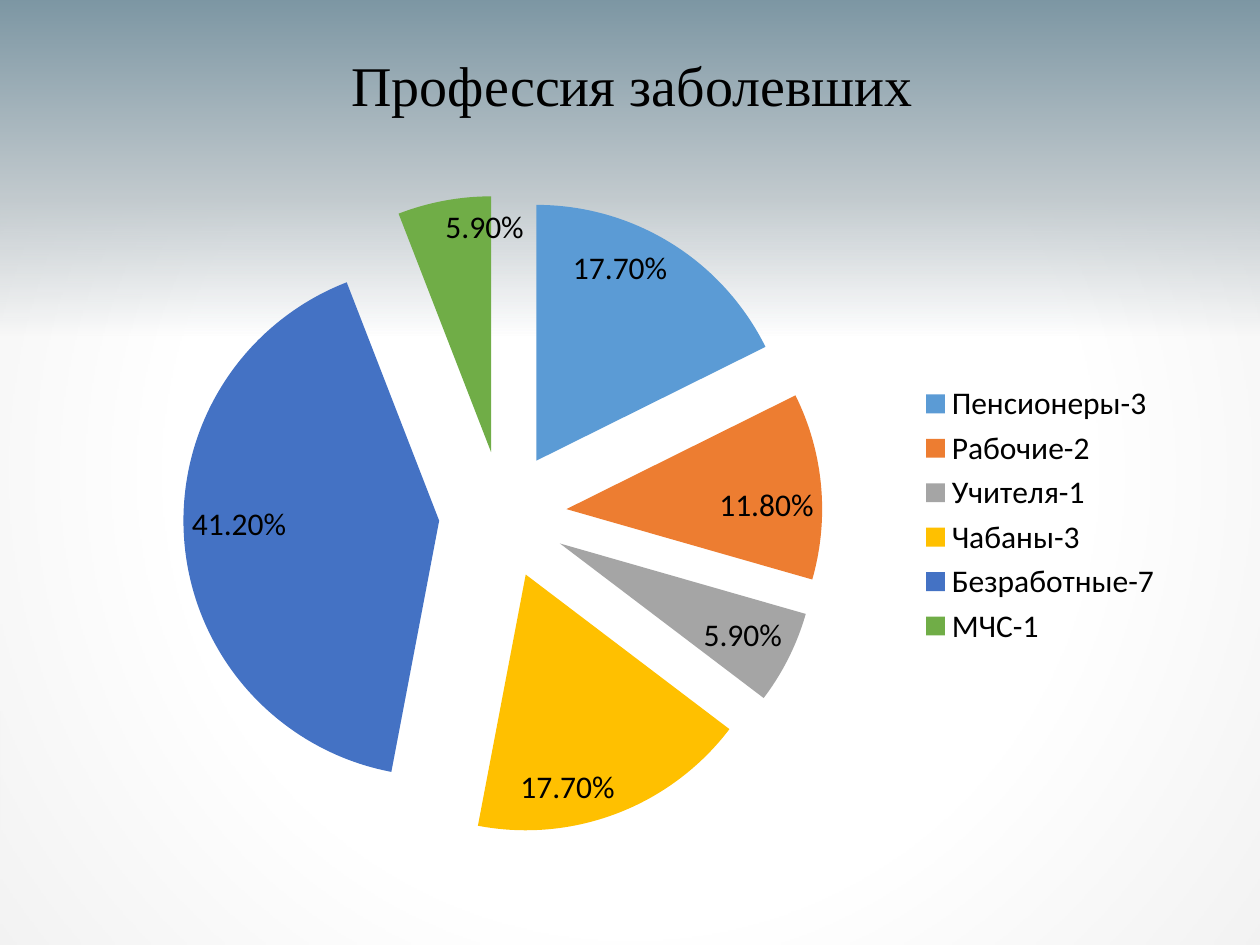
from lxml import etree
from pptx import Presentation
from pptx.chart.data import CategoryChartData
from pptx.dml.color import RGBColor
from pptx.enum.chart import XL_CHART_TYPE, XL_LABEL_POSITION, XL_LEGEND_POSITION
from pptx.enum.shapes import MSO_SHAPE
from pptx.enum.text import MSO_ANCHOR, PP_ALIGN
from pptx.oxml import parse_xml
from pptx.oxml.ns import nsdecls, qn
from pptx.util import Pt

PIE = XL_CHART_TYPE.PIE_EXPLODED
RIGHT = XL_LEGEND_POSITION.RIGHT
INSIDE_END = XL_LABEL_POSITION.INSIDE_END
RECT = MSO_SHAPE.RECTANGLE
MIDDLE = MSO_ANCHOR.MIDDLE
CENTER = PP_ALIGN.CENTER
W, H = 1260, 945


def px(*lengths):
    return [round(n * 914400 / 126) for n in lengths]


def color(value):
    return RGBColor.from_string(value)


prs = Presentation()
prs.slide_width, prs.slide_height = px(W, H)
s = prs.slides.add_slide(prs.slide_layouts[5])
title = s.shapes.title

# Background: a soft vignette and a band fading downwards
# Each stop is position %, colour, opacity %
VIGNETTE = ('<a:path path="circle"><a:fillToRect l="50000" t="50000" '
            'r="50000" b="50000"/></a:path>')
DOWN = '<a:lin ang="5400000" scaled="0"/>'
layers = [
    (H, VIGNETTE, [(0, "FFFFFF", 0), (58, "FFFFFF", 100), (100, "F2F2F2", 100)]),
    (336, DOWN, [(0, "7C96A3", 100), (58, "C1C9CD", 100), (100, "C1C9CD", 0)]),
]
for height, direction, stops in layers:
    sp = s.shapes.add_shape(RECT, *px(0, 0, W, height))
    sp.shadow.inherit = False
    sp.line.fill.background()
    gs = "".join(
        f'<a:gs pos="{pos * 1000}"><a:srgbClr val="{rgb}">'
        f'<a:alpha val="{alpha * 1000}"/></a:srgbClr></a:gs>'
        for pos, rgb, alpha in stops)
    sp._element.spPr.find(qn("a:prstGeom")).addnext(parse_xml(
        f'<a:gradFill {nsdecls("a")} rotWithShape="1">'
        f'<a:gsLst>{gs}</a:gsLst>{direction}</a:gradFill>'))

# Title, in front of the background
s.shapes._spTree.append(title._element)
title.left, title.top, title.width, title.height = px(90, 20, 1085, 137)
tf = title.text_frame
tf.vertical_anchor = MIDDLE
p = tf.paragraphs[0]
p.alignment, p.line_spacing = CENTER, 0.9
r = p.add_run()
r.text = "Профессия заболевших"
for name, value in {"name": "Times New Roman", "size": Pt(32)}.items():
    setattr(r.font, name, value)
r.font.color.rgb = color("000000")

# Pie chart: category, share, colour
slices = [
    ("Пенсионеры-3", 0.177, "5B9BD5"),
    ("Рабочие-2", 0.118, "ED7D31"),
    ("Учителя-1", 0.059, "A5A5A5"),
    ("Чабаны-3", 0.177, "FFC000"),
    ("Безработные-7", 0.412, "4472C4"),
    ("МЧС-1", 0.059, "70AD47"),
]
data = CategoryChartData(number_format="0.00%")
data.categories = [label for label, _, _ in slices]
data.add_series("Series 1", [share for _, share, _ in slices])
chart = s.shapes.add_chart(PIE, *px(90, 178, 1085, 674), data).chart
chart.has_title = False
chart.font.name, chart.font.size = "Calibri", Pt(18)
chart.font.color.rgb = color("000000")
chart.has_legend = True
chart.legend.position = RIGHT
chart.legend.include_in_layout = False

plot = chart.plots[0]
plot.vary_by_categories = True
ser = plot.series[0]
for i, (_, _, rgb) in enumerate(slices):
    fill = ser.points[i].format.fill
    fill.solid()
    fill.fore_color.rgb = color(rgb)

# Slices pulled apart
for old in ser._element.findall(qn("c:explosion")):
    ser._element.remove(old)
explosion = etree.Element(qn("c:explosion"), val="25")
ser._element.find(qn("c:dPt")).addprevious(explosion)

# Shares inside the outer edge
labels = ser.data_labels
for name, value in {"show_value": True, "show_percentage": False,
                    "number_format": "0.00%", "number_format_is_linked": False,
                    "position": INSIDE_END}.items():
    setattr(labels, name, value)

prs.save("out.pptx")
